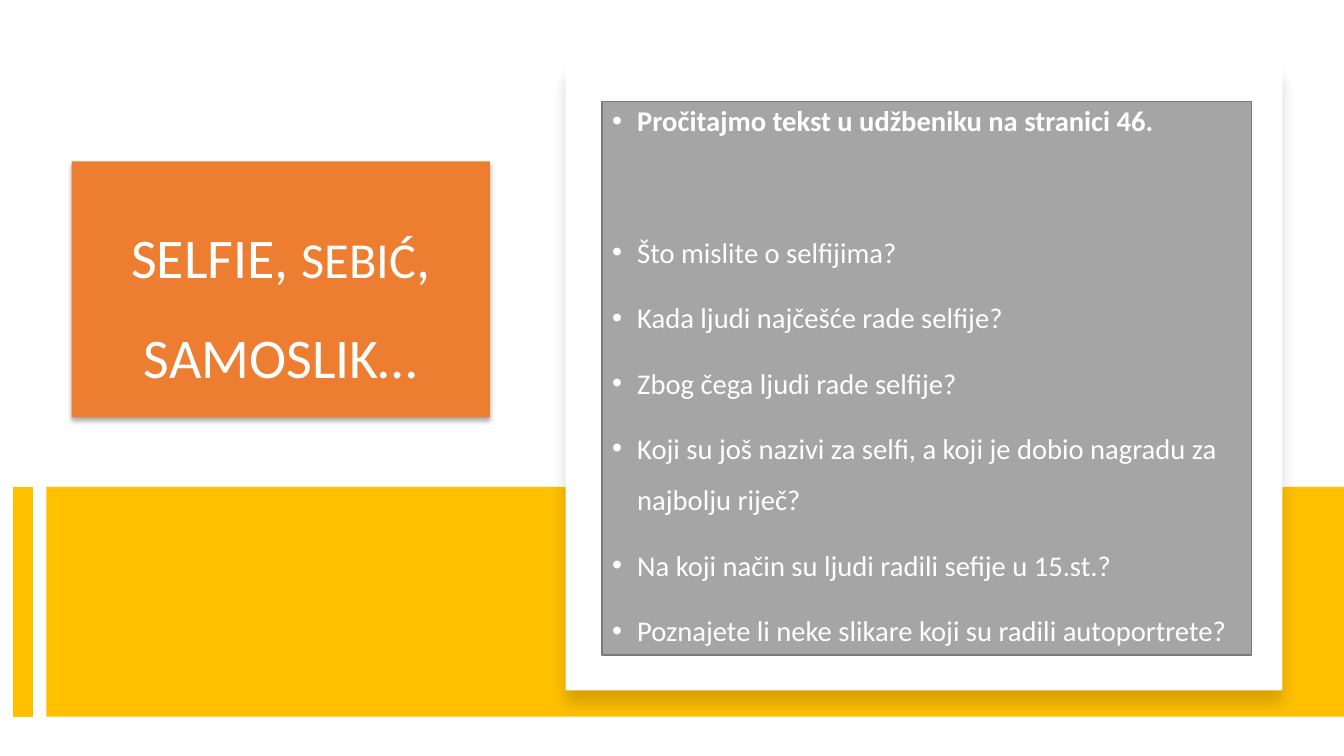
from dataclasses import dataclass
from typing import Optional

from lxml.etree import SubElement
from pptx import Presentation
from pptx.dml.color import RGBColor
from pptx.enum.shapes import MSO_CONNECTOR, MSO_SHAPE
from pptx.enum.text import MSO_ANCHOR, MSO_AUTO_SIZE, PP_ALIGN
from pptx.oxml.ns import qn
from pptx.util import Inches, Pt


@dataclass(frozen=True)
class Shade:
    alpha: int
    blur: float
    dist: float


@dataclass(frozen=True)
class Box:
    left: float
    top: float
    width: float
    height: float
    fill: str
    line: Optional[str] = None
    shade: Optional[Shade] = None


@dataclass(frozen=True)
class Item:
    text: str
    before: float = 10
    space: float = 1.5
    bold: bool = False


GOLD, WHITE, FONT = "FFC000", "FFFFFF", "Calibri"
TITLE = Box(0.71, 1.6, 4.15, 2.54, "ED7D31", shade=Shade(32, 3.5, 2.2))
BAND = Box(0.46, 4.83, 12.87, 2.28, GOLD)
CARD = Box(5.61, 0.64, 7.11, 6.21, WHITE, shade=Shade(15, 11, 10))
BODY = Box(5.97, 1.01, 6.44, 5.49, "A5A5A5", line="7A7A7A")

WORDS = [("SELFIE, ", 40), ("SEBIĆ", 36), (", SAMOSLIK…", 40)]
ITEMS = [
    Item("Pročitajmo tekst u udžbeniku na stranici 46.", 0, 0.9, True),
    Item("Što mislite o selfijima?", before=57),
    Item("Kada ljudi najčešće rade selfije?"),
    Item("Zbog čega ljudi rade selfije?"),
    Item("Koji su još nazivi za selfi, a koji je dobio nagradu za najbolju riječ?"),
    Item("Na koji način su ljudi radili sefije u 15.st.?"),
    Item("Poznajete li neke slikare koji su radili autoportrete?"),
]


def color(code: str) -> RGBColor:
    return RGBColor.from_string(code)


def effect(shape, shade: Optional[Shade] = None) -> None:
    group = SubElement(shape.element.spPr, qn("a:effectLst"))
    if shade:
        outer = SubElement(
            group, qn("a:outerShdw"), blurRad=str(Pt(shade.blur)),
            dist=str(Pt(shade.dist)), dir="5400000", algn="t", rotWithShape="0")
        tint = SubElement(outer, qn("a:srgbClr"), val="000000")
        SubElement(tint, qn("a:alpha"), val=str(shade.alpha * 1000))


def paint(shape, box: Box) -> None:
    shape.left, shape.top = Inches(box.left), Inches(box.top)
    shape.width, shape.height = Inches(box.width), Inches(box.height)
    shape.fill.solid()
    shape.fill.fore_color.rgb = color(box.fill)
    if box.line:
        shape.line.color.rgb = color(box.line)
        shape.line.width = Pt(1)
    else:
        shape.line.fill.background()
    effect(shape, box.shade)


def panel(slide, box: Box) -> None:
    paint(slide.shapes.add_shape(MSO_SHAPE.RECTANGLE, 0, 0, 0, 0), box)


def stripe(slide, x: float) -> None:
    line = slide.shapes.add_connector(
        MSO_CONNECTOR.STRAIGHT, Inches(x), Inches(BAND.top),
        Inches(x), Inches(BAND.top + BAND.height))
    line.line.color.rgb = color(GOLD)
    line.line.width = Pt(14)
    effect(line)


def setup(frame, anchor: MSO_ANCHOR) -> None:
    frame.word_wrap = True
    frame.auto_size = MSO_AUTO_SIZE.NONE
    frame.vertical_anchor = anchor


def style(para, space: float) -> None:
    para.line_spacing = space
    para.font.name = FONT
    para.font.color.rgb = color(WHITE)


def heading(shape) -> None:
    paint(shape, TITLE)
    setup(shape.text_frame, MSO_ANCHOR.MIDDLE)
    para = shape.text_frame.paragraphs[0]
    para.alignment = PP_ALIGN.CENTER
    style(para, 1.5)
    for text, size in WORDS:
        run = para.add_run()
        run.text = text
        run.font.size = Pt(size)


def bullets(shape) -> None:
    paint(shape, BODY)
    frame = shape.text_frame
    setup(frame, MSO_ANCHOR.TOP)
    frame.text = "\n".join(item.text for item in ITEMS)
    for para, item in zip(frame.paragraphs, ITEMS):
        style(para, item.space)
        para.space_before = Pt(item.before)
        para.font.size = Pt(20.4)
        para.font.bold = item.bold
        props = para._p.get_or_add_pPr()
        props.set("marL", str(Inches(0.25)))
        props.set("indent", str(-Inches(0.25)))
        mark = SubElement(props, qn("a:buChar"), char="•")
        props.find(qn("a:defRPr")).addprevious(mark)


def main() -> None:
    deck = Presentation()
    deck.slide_width, deck.slide_height = Inches(13.33), Inches(7.5)
    slide = deck.slides.add_slide(deck.slide_layouts[1])
    heading(slide.shapes.title)
    panel(slide, BAND)
    stripe(slide, 0.23)
    panel(slide, CARD)
    body = slide.placeholders[1]
    bullets(body)
    body.element.getparent().append(body.element)
    deck.save("out.pptx")


if __name__ == "__main__":
    main()
